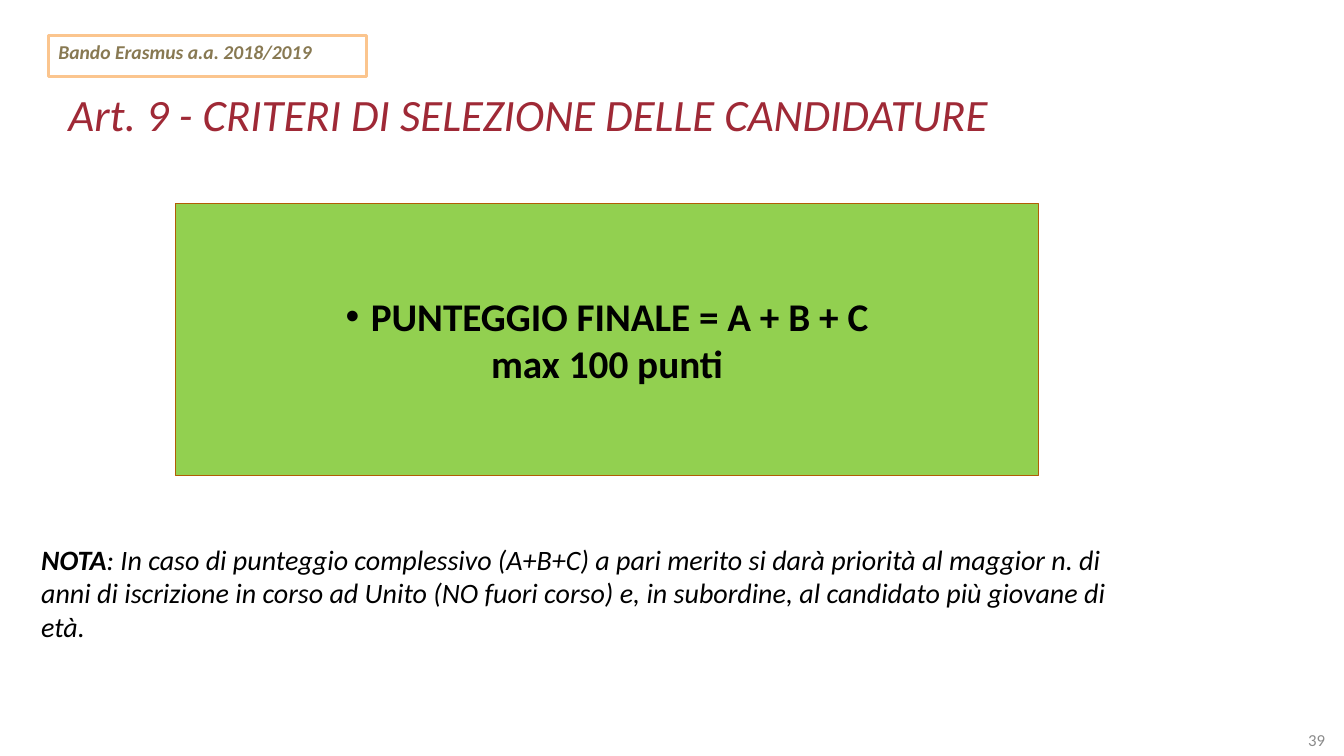
"""Build the slide on the selection criteria of the Erasmus call."""
from dataclasses import dataclass
from typing import Optional

import lxml.etree
import pptx
import pptx.dml.color
import pptx.enum.shapes
import pptx.enum.text
import pptx.oxml.ns
import pptx.util

Inches = pptx.util.Inches
Align = pptx.enum.text.PP_ALIGN
Anchor = pptx.enum.text.MSO_ANCHOR


@dataclass(frozen=True)
class Theme:
    font: str = "Calibri"
    ink: str = "000000"
    title: str = "9F2936"
    label: str = "887952"
    label_line: str = "FBC58E"
    score_fill: str = "92D050"
    score_line: str = "B15D06"
    number: str = "8B8B8B"
    title_size: int = 32
    score_size: int = 28
    note_size: int = 20
    label_size: int = 14
    number_size: int = 12


THEME = Theme()


@dataclass(frozen=True)
class Span:
    text: str
    bold: bool = False
    italic: bool = False


@dataclass(frozen=True)
class Line:
    spans: tuple[Span, ...]
    bullet: bool = False


@dataclass(frozen=True)
class Panel:
    area: tuple[float, float, float, float]
    lines: tuple[Line, ...]
    size: int
    color: str = THEME.ink
    align: Align = Align.LEFT
    anchor: Anchor = Anchor.TOP
    fill: Optional[str] = None
    outline: Optional[str] = None
    outline_width: float = 1


PANELS = (
    Panel((0.58, 0.4, 12.17, 1.45),
          (Line((Span("Art. 9 - CRITERI DI SELEZIONE DELLE CANDIDATURE", italic=True),)),),
          THEME.title_size, THEME.title, anchor=Anchor.MIDDLE),
    Panel((12.75, 7.17, 0.49, 0.33), (Line((Span("39"),)),),
          THEME.number_size, THEME.number, Align.RIGHT, Anchor.MIDDLE),
    Panel((1.74, 2.02, 8.56, 2.7),
          (Line((Span("PUNTEGGIO FINALE = A + B + C", bold=True),), bullet=True),
           Line((Span("max 100 punti", bold=True),))),
          THEME.score_size, align=Align.CENTER, anchor=Anchor.MIDDLE,
          fill=THEME.score_fill, outline=THEME.score_line),
    Panel((0.31, 5.33, 10.92, 1.1),
          (Line((Span("NOTA", bold=True, italic=True),
                 Span(": In caso di punteggio complessivo (A+B+C) a pari merito si darà "
                      "priorità al maggior n. di anni di iscrizione in corso ad Unito "
                      "(NO fuori corso) e, in subordine, al candidato più giovane di età.",
                      italic=True))),),
          THEME.note_size),
    Panel((0.48, 0.35, 3.16, 0.41),
          (Line((Span("Bando Erasmus a.a. 2018/2019", bold=True, italic=True),)),),
          THEME.label_size, THEME.label, outline=THEME.label_line, outline_width=2.25),
)


def rgb(color: str) -> pptx.dml.color.RGBColor:
    return pptx.dml.color.RGBColor.from_string(color)


def add_text(para, text: str, *, size: int, color: str, bold: bool, italic: bool) -> None:
    span = para.add_run()
    span.text = text
    span.font.name = THEME.font
    span.font.size = pptx.util.Pt(size)
    span.font.color.rgb = rgb(color)
    span.font.bold = bold
    span.font.italic = italic


def add_bullet(para, color: str, indent: float = 0.25) -> None:
    qn = pptx.oxml.ns.qn
    properties = para._p.get_or_add_pPr()
    properties.set("marL", str(Inches(indent)))
    properties.set("indent", str(-Inches(indent)))
    bullet_color = lxml.etree.SubElement(properties, qn("a:buClr"))
    lxml.etree.SubElement(bullet_color, qn("a:srgbClr")).set("val", color)
    lxml.etree.SubElement(properties, qn("a:buFont")).set("typeface", "Arial")
    lxml.etree.SubElement(properties, qn("a:buChar")).set("char", "•")


def add_box(page, panel: Panel):
    area = [Inches(length) for length in panel.area]
    if not panel.outline:
        return page.shapes.add_textbox(*area)
    box = page.shapes.add_shape(pptx.enum.shapes.MSO_SHAPE.RECTANGLE, *area)
    box.shadow.inherit = False
    if panel.fill:
        box.fill.solid()
        box.fill.fore_color.rgb = rgb(panel.fill)
    else:
        box.fill.background()
    box.line.color.rgb = rgb(panel.outline)
    box.line.width = pptx.util.Pt(panel.outline_width)
    return box


def draw_panel(page, panel: Panel) -> None:
    frame = add_box(page, panel).text_frame
    frame.word_wrap = True
    frame.vertical_anchor = panel.anchor
    for index, line in enumerate(panel.lines):
        para = frame.add_paragraph() if index else frame.paragraphs[0]
        para.alignment = panel.align
        if line.bullet:
            add_bullet(para, panel.color)
        for span in line.spans:
            add_text(para, span.text, size=panel.size, color=panel.color,
                     bold=span.bold, italic=span.italic)


def main() -> None:
    deck = pptx.Presentation()
    deck.slide_width = Inches(13.33)
    deck.slide_height = Inches(7.5)
    page = deck.slides.add_slide(deck.slide_layouts[6])
    for panel in PANELS:
        draw_panel(page, panel)
    deck.save("out.pptx")


if __name__ == "__main__":
    main()
